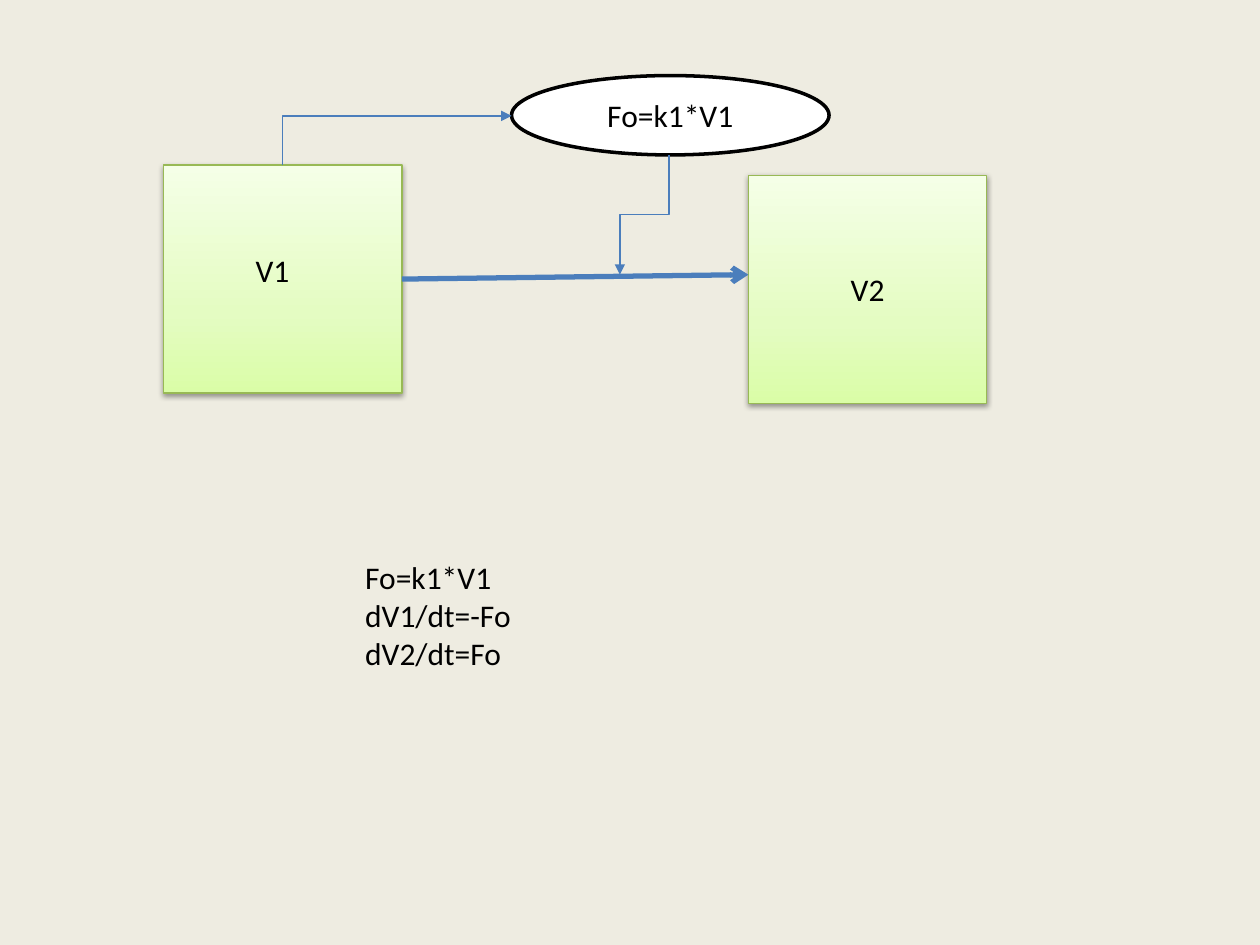
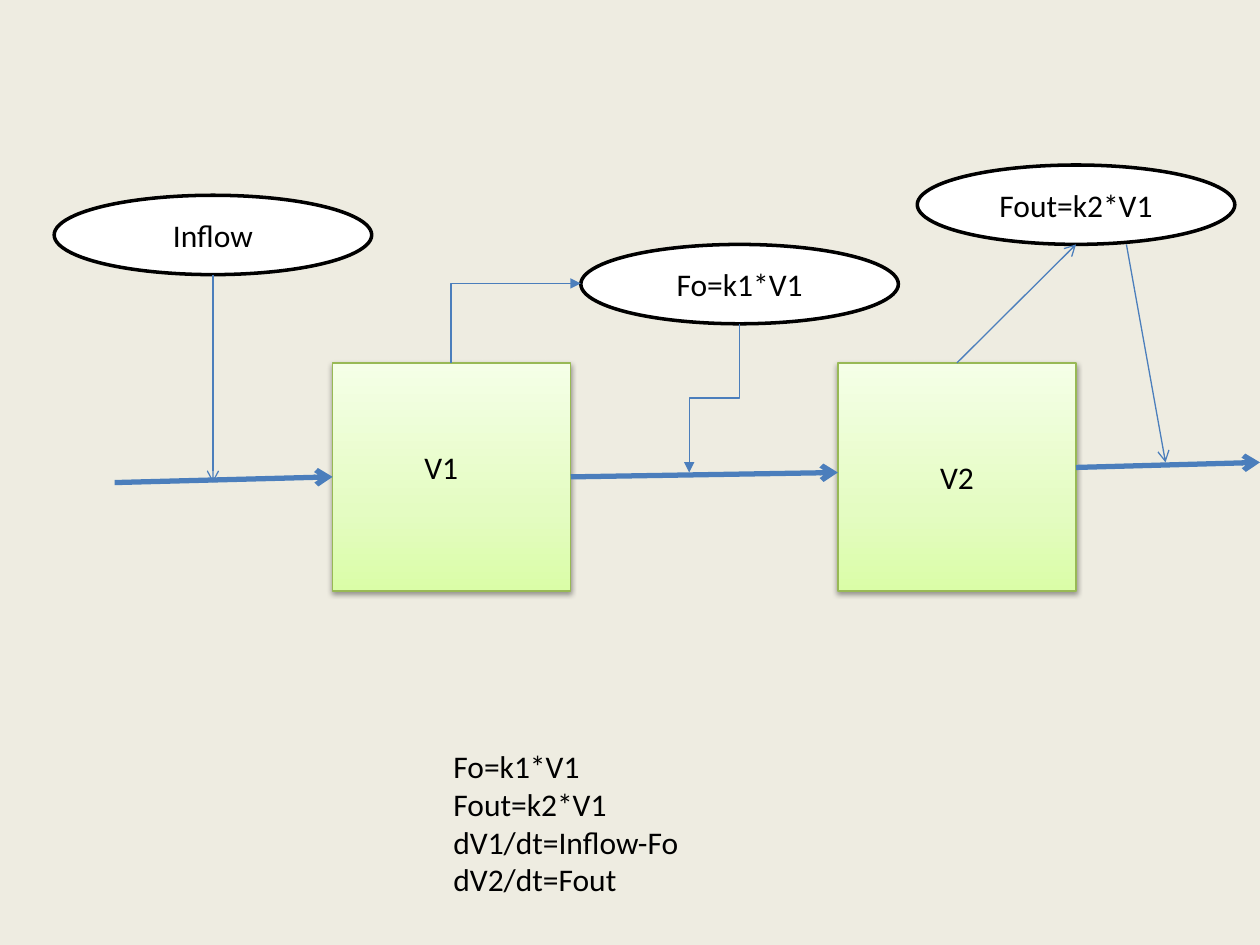
"""Build two stock-and-flow slides of a compartment model."""
from lxml.etree import SubElement
from pptx import Presentation
from pptx.dml.color import RGBColor
from pptx.enum.shapes import MSO_CONNECTOR, MSO_SHAPE
from pptx.enum.text import MSO_ANCHOR, PP_ALIGN
from pptx.oxml.ns import qn
from pptx.util import Inches, Pt

HUES = {"page": "EEECE1", "ink": "000000", "oval": "FFFFFF", "flow": "4B7EBC", "edge": "98B955"}
GRAD = {0: "DAFDA7", 35: "E4FCC2", 100: "F5FFE7"}
FONT = {"name": "Calibri", "size": Pt(18)}
BOX = (1.89, 1.81)
OVAL = (2.52, 0.63)
LINES = {
    "flow": {"pen": 3, "tip": "arrow"},
    "link": {"pen": 0.75, "tip": "arrow"},
    "turn": {"pen": 0.75, "tip": "triangle", "bend": "bentConnector2", "flip": True},
    "step": {"pen": 0.75, "tip": "triangle", "bend": "bentConnector3"},
}
SLIDES = [
    {
        "boxes": {"V1": (1.3, 1.31), "V2": (5.94, 1.39)},
        "ovals": {"Fo=k1*V1": (4.06, 0.6)},
        "notes": [
            (1.93, 1.94, 0.47, 0.4, ["V1"]),
            (2.8, 4.38, 1.37, 1.01, ["Fo=k1*V1", "dV1/dt=-Fo", "dV2/dt=Fo"]),
        ],
        "lines": [
            ("flow", 3.19, 2.21, 5.94, 2.18, ("V1", 3), None),
            ("turn", 2.24, 1.31, 4.06, 0.92, None, None),
            ("step", 5.31, 1.23, 4.92, 2.18, None, None),
        ],
    },
    {
        "boxes": {"V1": (2.64, 2.88), "V2": (6.65, 2.88)},
        "ovals": {"Fo=k1*V1": (4.61, 1.94), "Inflow": (0.43, 1.55), "Fout=k2*V1": (7.28, 1.31)},
        "notes": [
            (3.27, 3.51, 0.47, 0.4, ["V1"]),
            (3.5, 5.88, 2.01, 1.62,
             ["Fo=k1*V1", "Fout=k2*V1", "dV1/dt=Inflow-Fo", "dV2/dt=Fout"]),
        ],
        "lines": [
            ("flow", 4.53, 3.79, 6.65, 3.75, ("V1", 3), None),
            ("turn", 3.58, 2.88, 4.61, 2.25, None, None),
            ("step", 5.87, 2.57, 5.47, 3.75, None, None),
            ("flow", 0.91, 3.83, 2.64, 3.79, None, ("V1", 1)),
            ("link", 1.69, 2.18, 1.69, 3.83, None, None),
            ("flow", 8.54, 3.71, 10, 3.67, None, None),
            ("link", 8.94, 1.94, 9.25, 3.67, None, None),
            ("link", 7.6, 2.88, 8.54, 1.94, ("V2", 0), None),
        ],
    },
]


def write(shape, rows, align):
    frame = shape.text_frame
    frame.text = "\n".join(rows)
    for para in frame.paragraphs:
        para.alignment = align
        font = para.runs[0].font
        for key, val in FONT.items():
            setattr(font, key, val)
        font.color.rgb = RGBColor.from_string(HUES["ink"])


def place(slide, kind, spot, size, edge, pen):
    shape = slide.shapes.add_shape(kind, *map(Inches, spot + size))
    shape.shadow.inherit = False
    shape.line.color.rgb = RGBColor.from_string(HUES[edge])
    shape.line.width = Pt(pen)
    shape.text_frame.vertical_anchor = MSO_ANCHOR.MIDDLE
    return shape


prs = Presentation()
prs.slide_width, prs.slide_height = Inches(10), Inches(7.5)
back = prs.slide_master.background.fill
back.solid()
back.fore_color.rgb = RGBColor.from_string(HUES["page"])

for plan in SLIDES:
    slide = prs.slides.add_slide(prs.slide_layouts[6])

    boxes = {}
    for name, spot in plan["boxes"].items():
        box = place(slide, MSO_SHAPE.RECTANGLE, spot, BOX, "edge", 0.75)
        box.fill.gradient()
        box.fill.gradient_angle = 90
        props = box._element.spPr
        stops = props.find(".//" + qn("a:gsLst"))
        for old in list(stops):
            stops.remove(old)
        for pos, hue in GRAD.items():
            stop = SubElement(stops, qn("a:gs"), pos=str(pos * 1000))
            SubElement(stop, qn("a:srgbClr"), val=hue)
        shade = SubElement(props.find(qn("a:effectLst")), qn("a:outerShdw"), blurRad=str(Pt(3.1)),
                           dist=str(Pt(1.6)), dir="5400000", rotWithShape="0")
        tint = SubElement(shade, qn("a:srgbClr"), val=HUES["ink"])
        SubElement(tint, qn("a:alpha"), val="38000")
        boxes[name] = box
    write(boxes["V2"], ["V2"], PP_ALIGN.CENTER)

    for name, spot in plan["ovals"].items():
        oval = place(slide, MSO_SHAPE.OVAL, spot, OVAL, "ink", 2)
        oval.fill.solid()
        oval.fill.fore_color.rgb = RGBColor.from_string(HUES["oval"])
        write(oval, [name], PP_ALIGN.CENTER)

    for *area, rows in plan["notes"]:
        note = slide.shapes.add_textbox(*map(Inches, area))
        note.text_frame.word_wrap = False
        write(note, rows, PP_ALIGN.LEFT)

    for kind, x1, y1, x2, y2, start, end in plan["lines"]:
        look = LINES[kind]
        bend = look.get("bend")
        if bend:
            wide, high = abs(y2 - y1), abs(x2 - x1)
            left, top = (x1 + x2 - wide) / 2, (y1 + y2 - high) / 2
            ends = (left, top, left + wide, top + high)
        else:
            ends = (x1, y1, x2, y2)
        form = MSO_CONNECTOR.ELBOW if bend else MSO_CONNECTOR.STRAIGHT
        line = slide.shapes.add_connector(form, *map(Inches, ends))
        props = line._element.spPr
        if bend:
            frame = props.find(qn("a:xfrm"))
            frame.set("rot", "5400000")
            if look.get("flip"):
                for key in ("flipH", "flipV"):
                    frame.set(key, "1")
            props.find(qn("a:prstGeom")).set("prst", bend)
        if start:
            line.begin_connect(boxes[start[0]], start[1])
        if end:
            line.end_connect(boxes[end[0]], end[1])
        line.line.color.rgb = RGBColor.from_string(HUES["flow"])
        line.line.width = Pt(look["pen"])
        SubElement(props.find(qn("a:ln")), qn("a:tailEnd"), type=look["tip"])
        SubElement(props, qn("a:effectLst"))

prs.save("out.pptx")
